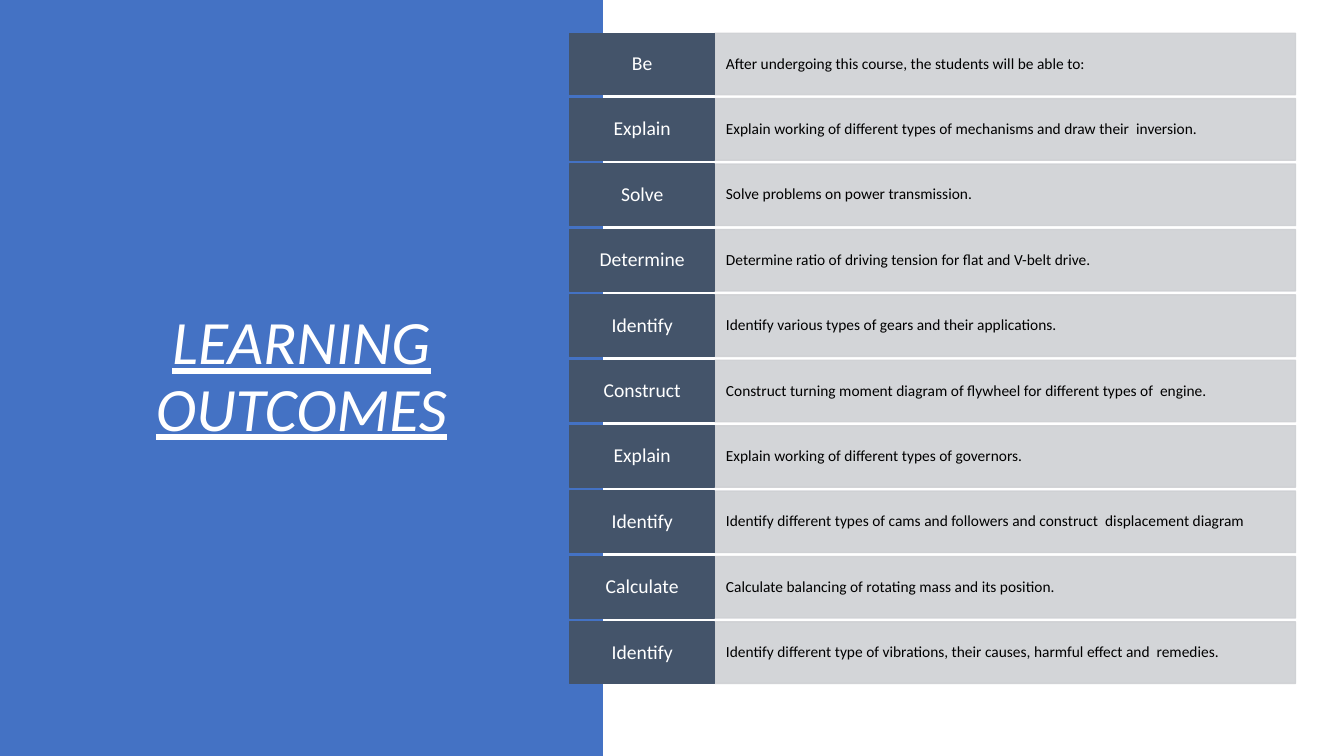
from lxml.etree import SubElement
from pptx import Presentation
from pptx.dml.color import RGBColor
from pptx.enum.shapes import MSO_SHAPE as Shape
from pptx.enum.text import MSO_ANCHOR as Anchor, MSO_AUTO_SIZE as AutoSize, PP_ALIGN as Align
from pptx.oxml.ns import qn
from pptx.util import Inches, Pt

FONT = "Calibri"
BLUE, SLATE, GREY, WHITE, BLACK = "4472C4", "44546A", "CFD1D4", "FFFFFF", "000000"

FIRST_TOP, LAST_TOP, ROW_HEIGHT = 0.33, 6.17, 0.61
VERB_LEFT, VERB_WIDTH, DETAIL_WIDTH = 5.65, 1.44, 5.76

OUTCOMES = [
    ("Be", "After undergoing this course, the students will be able to:"),
    ("Explain", "Explain working of different types of mechanisms and draw their  inversion."),
    ("Solve", "Solve problems on power transmission."),
    ("Determine", "Determine ratio of driving tension for flat and V-belt drive."),
    ("Identify", "Identify various types of gears and their applications."),
    ("Construct", "Construct turning moment diagram of flywheel for different types of  engine."),
    ("Explain", "Explain working of different types of governors."),
    ("Identify", "Identify different types of cams and followers and construct  displacement diagram"),
    ("Calculate", "Calculate balancing of rotating mass and its position."),
    ("Identify", "Identify different type of vibrations, their causes, harmful effect and  remedies."),
]


def paint(target, color):
    """Give a fill a solid colour."""
    target.solid()
    target.fore_color.rgb = RGBColor.from_string(color)


def add_box(page, left, top, width, height, color, opacity=100, outlined=True):
    box = page.shapes.add_shape(
        Shape.RECTANGLE, Inches(left), Inches(top), Inches(width), Inches(height))
    box.shadow.inherit = False
    paint(box.fill, color)
    if outlined:
        box.line.width = Pt(1)
        paint(box.line.fill, color)
    else:
        box.line.fill.background()
    if opacity < 100:
        for tint in box.element.spPr.iter(qn("a:srgbClr")):
            SubElement(tint, qn("a:alpha"), val=str(opacity * 1000))
    return box


def write(box, text, size, color, align, margins=(0.1, 0.05), italic=None, underline=None):
    frame = box.text_frame
    frame.word_wrap = True
    frame.auto_size = AutoSize.NONE
    frame.vertical_anchor = Anchor.MIDDLE
    frame.margin_left = frame.margin_right = Inches(margins[0])
    frame.margin_top = frame.margin_bottom = Inches(margins[1])
    para = frame.paragraphs[0]
    para.alignment = align
    para.line_spacing = 0.9
    span = para.add_run()
    span.text = text
    font = span.font
    font.name, font.size = FONT, Pt(size)
    font.italic, font.underline = italic, underline
    font.color.rgb = RGBColor.from_string(color)


def add_title(page):
    title = page.shapes.title
    title.left, title.top = Inches(0.68), Inches(0.7)
    title.width, title.height = Inches(4.62), Inches(6.1)
    write(title, "LEARNING OUTCOMES", 44, WHITE, Align.CENTER, italic=True, underline=True)
    return title


def add_outcome(page, top, verb, detail):
    detail_box = add_box(page, VERB_LEFT + VERB_WIDTH, top, DETAIL_WIDTH, ROW_HEIGHT, GREY, 90)
    write(detail_box, detail, 11, BLACK, Align.LEFT, (0.11, 0.16))
    verb_box = add_box(page, VERB_LEFT, top, VERB_WIDTH, ROW_HEIGHT, SLATE)
    write(verb_box, verb, 14, WHITE, Align.CENTER, (0.08, 0.06))


def main():
    deck = Presentation()
    deck.slide_width, deck.slide_height = Inches(13.33), Inches(7.5)
    page = deck.slides.add_slide(deck.slide_layouts[5])

    # Title on the blue panel, with the panel sent behind it
    title = add_title(page)
    panel = add_box(page, 0, 0, 5.98, 7.5, BLUE, outlined=False)
    title.element.addprevious(panel.element)

    # Evenly spaced outcome rows
    pitch = (LAST_TOP - FIRST_TOP) / (len(OUTCOMES) - 1)
    for row, (verb, detail) in enumerate(OUTCOMES):
        add_outcome(page, FIRST_TOP + row * pitch, verb, detail)

    deck.save("out.pptx")


if __name__ == "__main__":
    main()
